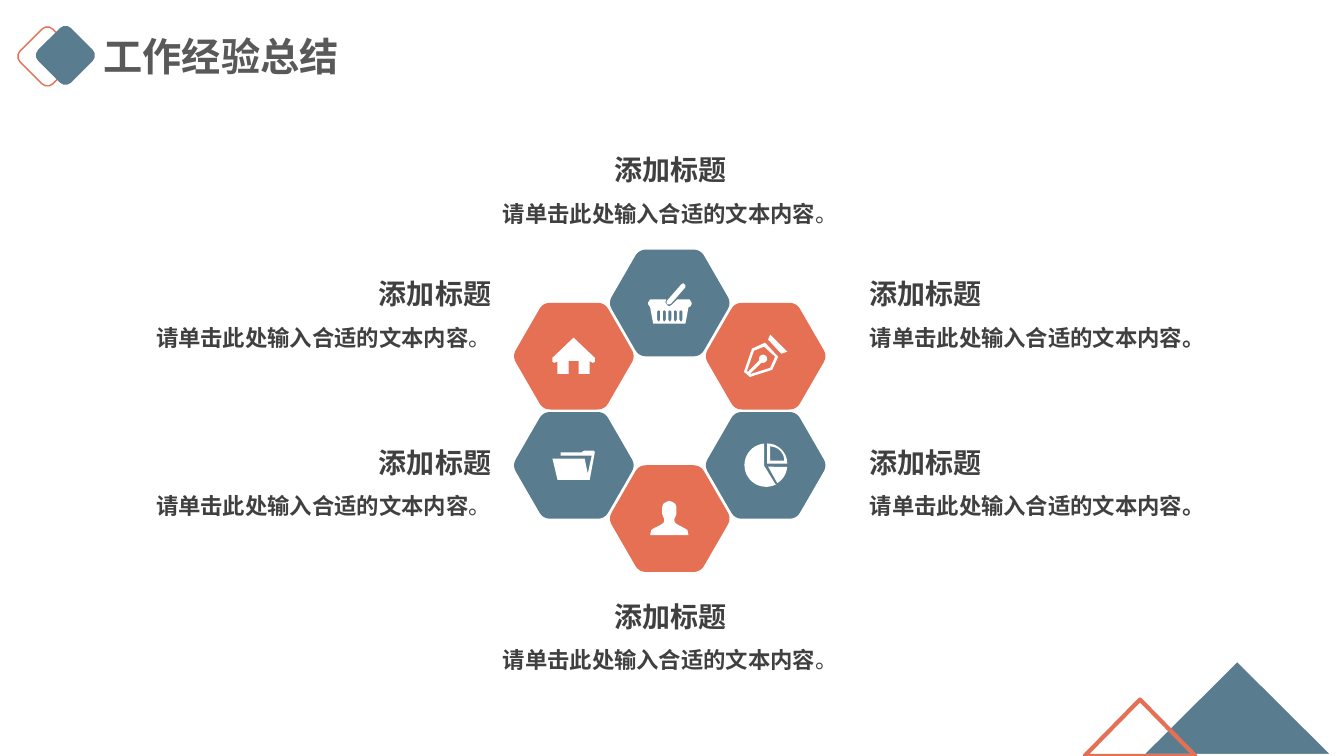
from math import cos, pi, radians, sin

from lxml import etree
from pptx import Presentation
from pptx.dml.color import RGBColor
from pptx.enum.shapes import MSO_SHAPE
from pptx.enum.text import MSO_AUTO_SIZE, PP_ALIGN
from pptx.oxml.ns import qn
from pptx.util import Pt

BLUE = RGBColor(0x59, 0x7C, 0x8F)
ORANGE = RGBColor(0xE6, 0x70, 0x54)
WHITE = RGBColor(0xFF, 0xFF, 0xFF)
TITLE_GRAY = RGBColor(0x59, 0x59, 0x59)
TEXT_GRAY = RGBColor(0x40, 0x40, 0x40)
FONT = "Noto Sans CJK SC"

TITLE = "工作经验总结"
HEADING = "添加标题"
BODY = "请单击此处输入合适的文本内容"
STOP = "。"

# ICON_UNIT scales the icon grids; five-number entries are arcs: x, y, radius, start, end
ICON_UNIT = 0.72
BASKET = [
    [(21, 21), (19, 21), (18, 19), (19, 17), (33, 1), (35, 0), (37, 2), (37, 4), (23, 20)],
    [(43, 19), (43, 21), (42, 23), (40, 24), (37, 40), (5, 40), (2, 24), (0, 21), (0, 19),
     (2, 16), (18, 16), (17, 19), (19, 22), (21, 23), (24, 21), (29, 16), (41, 16)],
] + [
    [(x, 28), (x + 1, 27), (x + 2, 27), (x + 3, 28), (x + 3, 36), (x + 2, 38), (x + 1, 38), (x, 36)]
    for x in (9, 14.5, 20, 25.5, 31)
]
PEN = [
    [(26, 0), (43, 17), (37, 19), (24, 5)],
    [(34, 22), (21, 8), (8, 14), (0, 37), (6, 42), (28, 35)],
    [(7, 39), (6, 39), (19, 24, 4, 110, -200), (4, 37), (3, 36), (10, 16), (20, 12), (31, 22), (26, 33)],
]
PIE = [
    [(20, 22), (31, 40), (22, 21.5, 21.5, 62, 265)],
    [(23, 20), (23, 20, 20, -90, 0)],
    [(26, 17), (26, 17, 14, -90, 0)],
    [(24, 23), (22, 21.5, 21, 5, 58)],
]
PERSON = [[
    (38, 34), (37, 29), (34, 27), (28, 24), (25, 22), (24, 20), (24, 18), (25, 16), (26, 13),
    (26, 11), (26, 6), (25, 3), (22, 1), (19, 0), (16, 1), (13, 3), (12, 6), (12, 11), (12, 13),
    (13, 16), (14, 18), (14, 20), (13, 22), (10, 24), (4, 27), (1, 29), (0, 34),
]]
FOLDER = [[
    (40, 0), (32, 0), (30, 1), (29, 2), (8, 2), (8, 5), (39, 5), (35, 23), (32, 8), (0, 8),
    (5, 29), (37, 29), (42, 2), (41.5, 0.5),
]]
HOUSE = [[
    (42, 24), (40, 25), (38, 24), (37, 23), (37, 36), (26, 36), (26, 23), (16, 23), (16, 36),
    (5, 36), (5, 23), (4, 24), (2, 25), (0, 24), (0, 20), (21, 0), (42, 20),
]]

RING_CENTER = (478.4, 293.4)
COLUMN_STEP, SIDE_RISE, END_RISE = 68.5, 39, 77
HEXAGON_RADIUS, CORNER_CUT = 44, 0.12
HEXAGONS = [
    (0, -END_RISE, BLUE, BASKET, (463, 202.3)),
    (COLUMN_STEP, -SIDE_RISE, ORANGE, PEN, (531.4, 239)),
    (COLUMN_STEP, SIDE_RISE, BLUE, PIE, (531.4, 316.8)),
    (0, END_RISE, ORANGE, PERSON, (464.4, 357.8)),
    (-COLUMN_STEP, SIDE_RISE, BLUE, FOLDER, (394.6, 321.8)),
    (-COLUMN_STEP, -SIDE_RISE, ORANGE, HOUSE, (394.6, 241.2)),
]
LABELS = [
    (328.3, 93.6, 301, PP_ALIGN.CENTER, False),
    (614.2, 182.2, 355, PP_ALIGN.LEFT, True),
    (614.2, 302.4, 363, PP_ALIGN.LEFT, True),
    (328.3, 412.6, 301, PP_ALIGN.CENTER, False),
    (6.5, 182.2, 351.4, PP_ALIGN.RIGHT, False),
    (7.9, 302.4, 350, PP_ALIGN.RIGHT, False),
]
LABEL_HEIGHT = 69
DIAMONDS = [
    (17.3, 23.8, 33.1, 33.1, None, ORANGE, 1),
    (30.2, 23, 33.1, 33.1, BLUE, None, 0),
]
TRIANGLES = [
    (814.3, 470.9, 139, 69.1, BLUE, WHITE, 3),
    (774.7, 499.7, 79.2, 40.3, None, ORANGE, 3),
]


def paint(shape, fill, line=None, width=0):
    shape.shadow.inherit = False
    for part, color in ((shape.fill, fill), (shape.line.fill, line)):
        if color is None:
            part.background()
        else:
            part.solid()
            part.fore_color.rgb = color
    if line is not None:
        shape.line.width = Pt(width)


def add_preset(slide, kind, left, top, width, height, fill, line, line_width, rotation=0):
    shape = slide.shapes.add_shape(kind, Pt(left), Pt(top), Pt(width), Pt(height))
    shape.rotation = rotation
    paint(shape, fill, line, line_width)


def expand(contour):
    points = []
    for entry in contour:
        if len(entry) == 2:
            points.append(entry)
            continue
        x, y, radius, start, end = entry
        for step in range(25):
            angle = radians(start + (end - start) * step / 24)
            points.append((x + radius * cos(angle), y + radius * sin(angle)))
    return points


def add_outline(slide, contours, origin, unit, color):
    builder = None
    for contour in contours:
        points = [(Pt(origin[0] + unit * x), Pt(origin[1] + unit * y)) for x, y in expand(contour)]
        if builder is None:
            builder = slide.shapes.build_freeform(*points[0])
        else:
            builder.move_to(*points[0])
        builder.add_line_segments(points[1:], close=True)
    paint(builder.convert_to_shape(), color)


def rounded_hexagon():
    corners = [(cos(k * pi / 3), sin(k * pi / 3)) for k in range(6)]
    points = []
    for k, corner in enumerate(corners):
        before, after = corners[k - 1], corners[(k + 1) % 6]
        for step in range(9):
            t = step / 8
            pull_before, pull_after = CORNER_CUT * (1 - t) ** 2, CORNER_CUT * t ** 2
            points.append(tuple(
                c + pull_before * (b - c) + pull_after * (a - c)
                for b, c, a in zip(before, corner, after)
            ))
    return points


def add_run(paragraph, text, size, color, bold=True):
    run = paragraph.add_run()
    run.text = text
    for name, value in {"size": Pt(size), "bold": bold, "name": FONT}.items():
        setattr(run.font, name, value)
    run.font.color.rgb = color
    etree.SubElement(run.font._element, qn("a:ea"), typeface=FONT)


def add_text_frame(slide, left, top, width, height, wrap):
    frame = slide.shapes.add_textbox(Pt(left), Pt(top), Pt(width), Pt(height)).text_frame
    frame.word_wrap = wrap
    frame.auto_size = MSO_AUTO_SIZE.SHAPE_TO_FIT_TEXT
    return frame


def main():
    presentation = Presentation()
    presentation.slide_width, presentation.slide_height = Pt(960), Pt(540)
    slide = presentation.slides.add_slide(presentation.slide_layouts[6])

    for diamond in DIAMONDS:
        add_preset(slide, MSO_SHAPE.ROUNDED_RECTANGLE, *diamond, rotation=45)
    title_frame = add_text_frame(slide, 67, 19.4, 184.3, 41, False)
    add_run(title_frame.paragraphs[0], TITLE, 28, TITLE_GRAY)

    hexagon = [rounded_hexagon()]
    for dx, dy, color, icon, icon_origin in HEXAGONS:
        center = (RING_CENTER[0] + dx, RING_CENTER[1] + dy)
        add_outline(slide, hexagon, center, HEXAGON_RADIUS, color)
        add_outline(slide, icon, icon_origin, ICON_UNIT, WHITE)

    for left, top, width, alignment, bold_stop in LABELS:
        frame = add_text_frame(slide, left, top, width, LABEL_HEIGHT, True)
        heading, body = frame.paragraphs[0], frame.add_paragraph()
        for paragraph in (heading, body):
            paragraph.alignment = alignment
            paragraph.line_spacing = 1.5
        add_run(heading, HEADING, 20, TEXT_GRAY)
        add_run(body, BODY, 16, TEXT_GRAY)
        add_run(body, STOP, 16, TEXT_GRAY, bold_stop)

    for triangle in TRIANGLES:
        add_preset(slide, MSO_SHAPE.ISOSCELES_TRIANGLE, *triangle)

    presentation.save("out.pptx")


if __name__ == "__main__":
    main()
